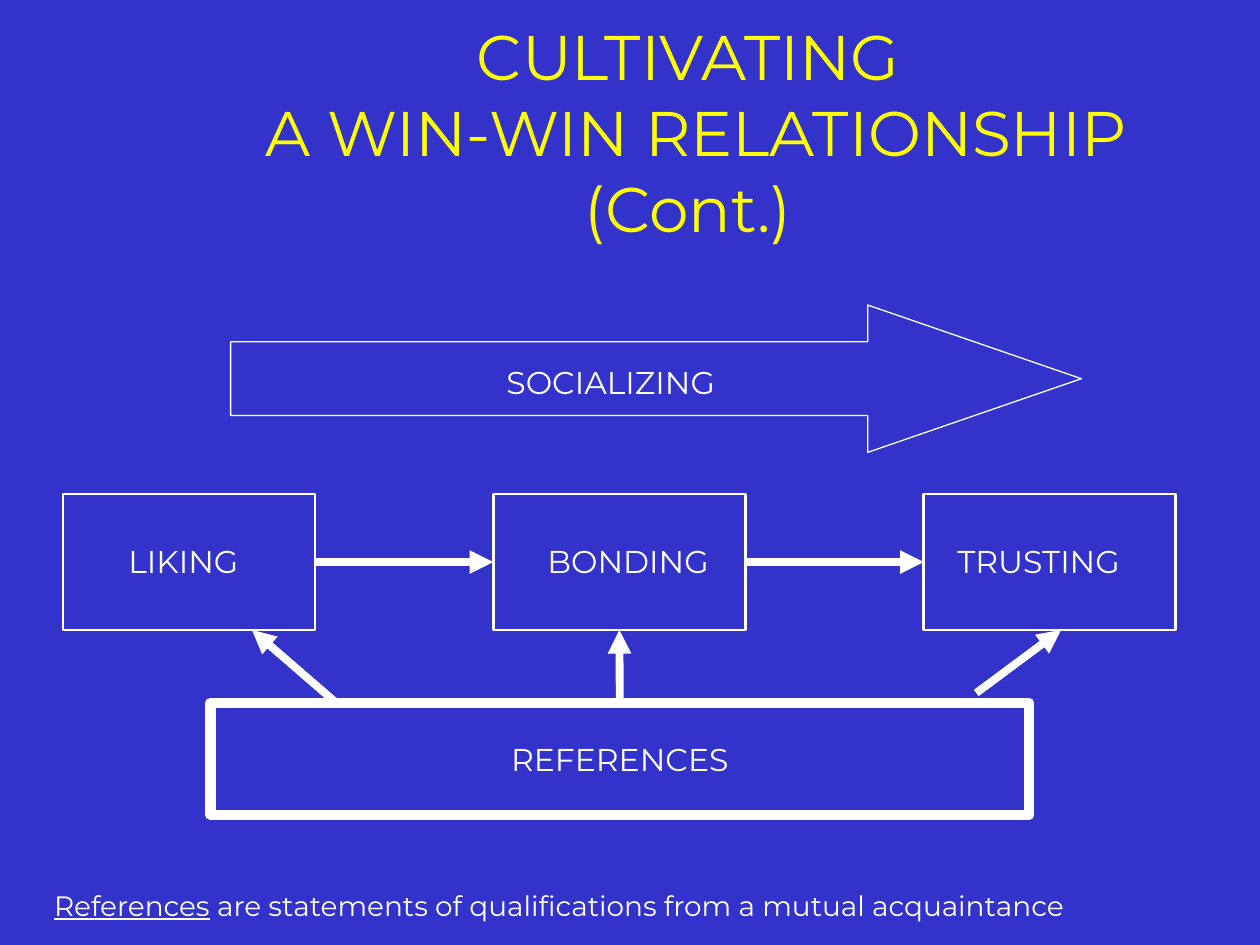
from dataclasses import dataclass

from lxml import etree
from pptx import Presentation
from pptx.dml.color import RGBColor
from pptx.enum.shapes import MSO_CONNECTOR, MSO_SHAPE
from pptx.enum.text import MSO_ANCHOR, MSO_AUTO_SIZE, PP_ALIGN
from pptx.oxml.ns import qn
from pptx.util import Cm, Pt

RECTANGLE = MSO_SHAPE.RECTANGLE
RIGHT_ARROW = MSO_SHAPE.RIGHT_ARROW
STRAIGHT = MSO_CONNECTOR.STRAIGHT
MIDDLE = MSO_ANCHOR.MIDDLE
CENTER = PP_ALIGN.CENTER
LEFT = PP_ALIGN.LEFT
NO_AUTOFIT = MSO_AUTO_SIZE.NONE
TOP_SIDE, LEFT_SIDE, BOTTOM_SIDE, RIGHT_SIDE = range(4)


@dataclass(frozen=True)
class Theme:
    font: str = "Montserrat"
    background: RGBColor = RGBColor(0x33, 0x33, 0xCC)
    title_color: RGBColor = RGBColor(0xFF, 0xFF, 0x00)
    foreground: RGBColor = RGBColor(0xFF, 0xFF, 0xFF)
    title_size: int = 36
    label_size: int = 18
    note_size: int = 16
    thin_line: float = 0.75
    box_line: float = 1.5
    arrow_line: float = 4.5
    heavy_line: float = 6


THEME = Theme()


@dataclass(frozen=True)
class Box:
    """A region in centimetres."""
    left: float
    top: float
    width: float
    height: float

    def inner(self, left, top, width, height):
        return Box(self.left + left, self.top + top, width, height)

    def lengths(self):
        return Cm(self.left), Cm(self.top), Cm(self.width), Cm(self.height)


def style_paragraph(paragraph, size, color=THEME.foreground, alignment=LEFT):
    paragraph.alignment = alignment
    paragraph.font.name = THEME.font
    paragraph.font.size = Pt(size)
    paragraph.font.color.rgb = color


def add_outline(slide, kind, box, line_width):
    shape = slide.shapes.add_shape(kind, *box.lengths())
    shape.shadow.inherit = False
    shape.fill.background()
    shape.line.color.rgb = THEME.foreground
    shape.line.width = Pt(line_width)
    return shape


def add_label(slide, box, text, size=THEME.label_size):
    frame = slide.shapes.add_textbox(*box.lengths()).text_frame
    frame.word_wrap = True
    paragraph = frame.paragraphs[0]
    paragraph.text = text
    style_paragraph(paragraph, size)
    return paragraph


def add_arrow(slide, start=(0, 0), end=(0, 0)):
    points = [Cm(value) for value in (*start, *end)]
    connector = slide.shapes.add_connector(STRAIGHT, *points)
    connector.line.color.rgb = THEME.foreground
    connector.line.width = Pt(THEME.arrow_line)
    etree.SubElement(connector.line._get_or_add_ln(), qn("a:tailEnd"), type="triangle")
    etree.SubElement(connector._element.spPr, qn("a:effectLst"))
    return connector


def join(slide, start_shape, start_side, end_shape, end_side):
    connector = add_arrow(slide)
    connector.begin_connect(start_shape, start_side)
    connector.end_connect(end_shape, end_side)


def build_title(slide, box):
    title = slide.shapes.title
    title.left, title.top, title.width, title.height = box.lengths()
    frame = title.text_frame
    frame.text = "CULTIVATING\n A WIN-WIN RELATIONSHIP (Cont.)"
    frame.word_wrap = False
    frame.auto_size = NO_AUTOFIT
    frame.vertical_anchor = MIDDLE
    for paragraph in frame.paragraphs:
        style_paragraph(paragraph, THEME.title_size, THEME.title_color, CENTER)


def build_socializing(slide, box):
    arrow = add_outline(slide, RIGHT_ARROW, box, THEME.thin_line)
    arrow.adjustments[0] = 0.5
    arrow.adjustments[1] = 1.45
    add_label(slide, box.inner(5.31, 1.04, 5.72, 1.02), "SOCIALIZING")


def build_stages(slide, box):
    # Label text, its offset in the stage and its width
    labels = [("LIKING", 1.07, 3.02), ("BONDING", 0.84, 3.86), ("TRUSTING", 0.43, 4.22)]
    stage_width = 5.08
    step = (box.width - stage_width) / (len(labels) - 1)
    stages = []
    for index, (text, offset, width) in enumerate(labels):
        stage_box = box.inner(index * step, 0, stage_width, box.height)
        stages.append(add_outline(slide, RECTANGLE, stage_box, THEME.box_line))
        add_label(slide, stage_box.inner(offset, 0.84, width, 1.02), text)
    for previous, following in zip(stages, stages[1:]):
        join(slide, previous, RIGHT_SIDE, following, LEFT_SIDE)
    return stages


def build_references(slide, box, bonding):
    references = add_outline(slide, RECTANGLE, box, THEME.heavy_line)
    frame = references.text_frame
    frame.vertical_anchor = MIDDLE
    frame.text = "REFERENCES"
    style_paragraph(frame.paragraphs[0], THEME.label_size, alignment=CENTER)

    # Upright arrow to the middle stage, slanted ones to the outer stages
    join(slide, references, TOP_SIDE, bonding, BOTTOM_SIDE)
    for start_x, start_y, end_x in [(2.54, 0, 0.84), (15.44, -0.2, 17.15)]:
        add_arrow(slide, (box.left + start_x, box.top + start_y),
                  (box.left + end_x, box.top - 1.47))


def build_note(slide, box):
    paragraph = add_label(slide, box, "References", THEME.note_size)
    paragraph.runs[0].font.underline = True
    paragraph.add_run().text = " are statements of qualifications from a mutual acquaintance"


def main():
    presentation = Presentation()
    presentation.slide_width, presentation.slide_height = Cm(25.4), Cm(19.05)
    slide = presentation.slides.add_slide(presentation.slide_layouts[5])
    slide.background.fill.solid()
    slide.background.fill.fore_color.rgb = THEME.background

    build_title(slide, Box(3.61, 0.84, 20.52, 3.61))
    build_socializing(slide, Box(4.65, 6.15, 17.15, 2.97))
    stages = build_stages(slide, Box(1.27, 9.96, 22.43, 2.74))
    build_references(slide, Box(4.24, 14.17, 16.51, 2.26), stages[1])
    build_note(slide, Box(0.84, 17.78, 28.58, 0.94))

    presentation.save("out.pptx")


if __name__ == "__main__":
    main()
